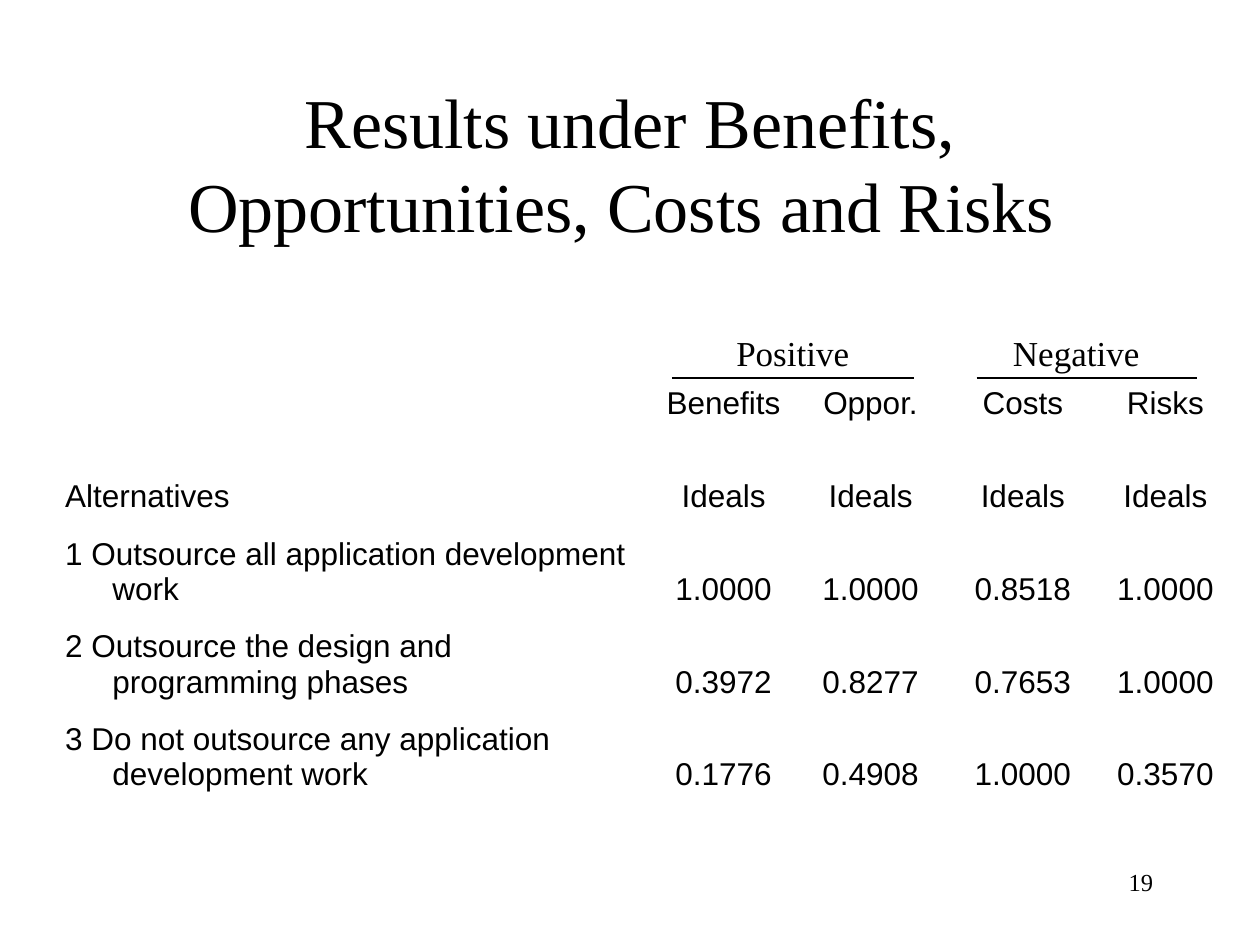
from pptx import Presentation
from pptx.dml.color import RGBColor
from pptx.enum.shapes import MSO_CONNECTOR
from pptx.enum.text import MSO_ANCHOR as Anchor, PP_ALIGN as Align
from pptx.oxml.ns import qn
from pptx.util import Pt
from lxml.etree import SubElement

BLACK = RGBColor(0, 0, 0)
SERIF, SANS = "Times New Roman", "Arial"
NO_STYLE_NO_GRID = "{2D5ABB26-0587-4C30-8999-92F81FD0307C}"

COLUMN_WIDTHS = [341, 85, 83, 91, 72]
ROW_HEIGHTS = [112.5, 53, 53, 53, 53]
RESULTS = [
    ["", "Benefits", "Oppor.", "Costs", "Risks"],
    ["Alternatives"] + ["Ideals"] * 4,
    ["1 Outsource all application development work",
     "1.0000", "1.0000", "0.8518", "1.0000"],
    ["2 Outsource the design and programming phases",
     "0.3972", "0.8277", "0.7653", "1.0000"],
    ["3 Do not outsource any application development work",
     "0.1776", "0.4908", "1.0000", "0.3570"],
]
# heading, heading left, rule start, rule end
GROUPS = [("Positive", 408, 384, 522), ("Negative", 570, 558, 684)]


class SlideBuilder:
    def __init__(self, page):
        self.page = page

    def style(self, paragraph, size, font, align):
        paragraph.alignment = align
        paragraph.font.size = Pt(size)
        paragraph.font.name = font
        paragraph.font.color.rgb = BLACK

    def text(self, words, left, top, width, height, size,
             align=Align.CENTER, anchor=Anchor.TOP):
        box = self.page.shapes.add_textbox(Pt(left), Pt(top), Pt(width), Pt(height))
        frame = box.text_frame
        frame.word_wrap = True
        frame.vertical_anchor = anchor
        paragraph = frame.paragraphs[0]
        paragraph.text = words
        self.style(paragraph, size, SERIF, align)

    def rule(self, start, end, top):
        line = self.page.shapes.add_connector(
            MSO_CONNECTOR.STRAIGHT, Pt(start), Pt(top), Pt(end), Pt(top))
        line.line.color.rgb = BLACK
        line.line.width = Pt(0.75)
        SubElement(line._element.spPr, qn("a:effectLst"))

    def table(self, rows, left, top, widths, heights):
        frame = self.page.shapes.add_table(
            len(rows), len(widths), Pt(left), Pt(top), Pt(sum(widths)), Pt(sum(heights)))
        table = frame.table
        table.first_row = table.horz_banding = False
        table._tbl.tblPr.find(qn("a:tableStyleId")).text = NO_STYLE_NO_GRID
        for column, width in zip(table.columns, widths):
            column.width = Pt(width)
        for row, height, entries in zip(table.rows, heights, rows):
            row.height = Pt(height)
            for index, (cell, words) in enumerate(zip(row.cells, entries)):
                self.fill_cell(cell, words, Align.CENTER if index else Align.LEFT)

    def fill_cell(self, cell, words, align):
        """Set bottom-anchored text with a hanging indent on a clear cell."""
        cell.fill.background()
        cell.vertical_anchor = Anchor.BOTTOM
        paragraph = cell.text_frame.paragraphs[0]
        paragraph.text = words
        self.style(paragraph, 18, SANS, align)
        properties = paragraph._p.get_or_add_pPr()
        properties.set("marL", str(Pt(27)))
        properties.set("indent", str(Pt(-27)))


def main():
    deck = Presentation()
    deck.slide_width, deck.slide_height = Pt(720), Pt(540)
    builder = SlideBuilder(deck.slides.add_slide(deck.slide_layouts[6]))

    builder.text("19", 516, 492, 150, 36, 14, Align.RIGHT)
    builder.text("Results under Benefits, Opportunities, Costs and Risks ",
                 54, 48, 612, 90, 40, anchor=Anchor.MIDDLE)
    builder.table(RESULTS, 30, 132, COLUMN_WIDTHS, ROW_HEIGHTS)
    for heading, left, start, end in GROUPS:
        builder.text(heading, left, 186, 90, 31, 20)
        builder.rule(start, end, 216)

    deck.save("out.pptx")


if __name__ == "__main__":
    main()
